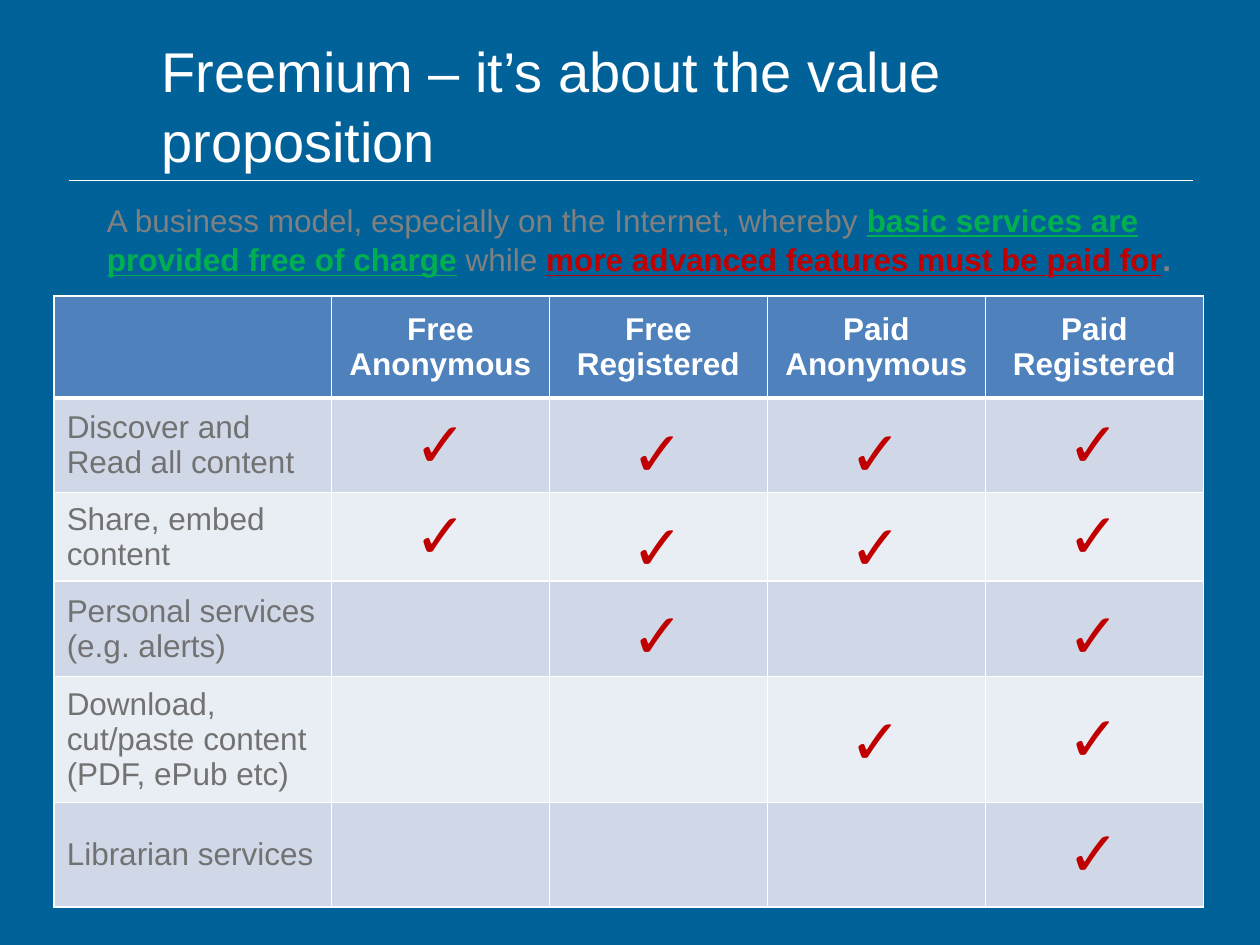
from lxml import etree
from pptx import Presentation
from pptx.dml.color import RGBColor
from pptx.enum.shapes import MSO_CONNECTOR
from pptx.enum.text import MSO_ANCHOR, PP_ALIGN
from pptx.oxml.ns import qn
from pptx.util import Inches, Pt

STRAIGHT = MSO_CONNECTOR.STRAIGHT
MIDDLE = MSO_ANCHOR.MIDDLE
LEFT, CENTER = PP_ALIGN.LEFT, PP_ALIGN.CENTER

WHITE, GREY, RED = "FFFFFF", "808080", "C00000"
CHECK = "✓"
TITLE = {"size": Pt(32), "name": "Arial", "color": WHITE, "bold": False}
BODY = {"size": Pt(18), "name": "Arial", "color": GREY}
KEY_POINT = {**BODY, "bold": True, "underline": True}
HEADER = {**BODY, "color": WHITE, "bold": True}
FEATURE = {**BODY, "color": "727272", "bold": False}
MARK = {"size": Pt(36), "name": "Arial", "color": RED, "bold": False}
SERIF_MARK = {**MARK, "name": "TeX Gyre Schola"}

DEFINITION = [
    ("A business model, especially on the Internet, whereby ", BODY),
    ("basic services are provided free of charge", {**KEY_POINT, "color": "00B050"}),
    (" while ", BODY),
    ("more advanced features must be paid for", {**KEY_POINT, "color": RED}),
    (".", {**BODY, "bold": True}),
]
HEADINGS = ["", "Free Anonymous", "Free Registered", "Paid Anonymous", "Paid\nRegistered"]
# Feature, then the marks of the four plans: A = Arial, S = serif, - = none
FEATURES = [
    ("Discover and Read all content", "ASSA"),
    ("Share, embed content", "ASSA"),
    ("Personal services (e.g. alerts)", "-S-S"),
    ("Download, cut/paste content (PDF, ePub etc)", "--SA"),
    ("Librarian services", "---A"),
]
MARK_STYLES = {"A": MARK, "S": SERIF_MARK}
COLUMN_WIDTHS = [22] + [17.3] * 4
ROW_HEIGHTS = [10.8, 10, 9.33, 10.13, 13.33, 11.07]
HEADER_FILL = "4F81BD"
BAND_FILLS = ["D0D8E8", "E9EDF4"]


def rgb(color):
    return RGBColor.from_string(color)


class SlideBuilder:
    """Draws on one slide; lengths are percentages of its width and height."""

    def __init__(self, deck, background):
        self.deck = deck
        self.slide = deck.slides.add_slide(deck.slide_layouts[5])
        fill = self.slide.background.fill
        fill.solid()
        fill.fore_color.rgb = rgb(background)

    def across(self, share):
        return round(self.deck.slide_width * share / 100)

    def down(self, share):
        return round(self.deck.slide_height * share / 100)

    def frame(self, left, top, width, height):
        return self.across(left), self.down(top), self.across(width), self.down(height)

    def add_spans(self, para, spans, align=LEFT, spacing=1.0):
        """Fill a paragraph with styled runs; a newline is a line break."""
        para.alignment = align
        para.line_spacing = spacing
        for text, style in spans:
            for index, line in enumerate(text.split("\n")):
                if index:
                    para.add_line_break()
                span = para.add_run()
                span.text = line
                for name, value in style.items():
                    if name == "color":
                        span.font.color.rgb = rgb(value)
                    else:
                        setattr(span.font, name, value)

    def title(self, text, *place):
        box = self.slide.shapes.title
        box.left, box.top, box.width, box.height = self.frame(*place)
        box.text_frame.vertical_anchor = MIDDLE
        self.add_spans(box.text_frame.paragraphs[0], [(text, TITLE)], spacing=1.05)

    def text(self, spans, *place):
        box = self.slide.shapes.add_textbox(*self.frame(*place))
        box.text_frame.word_wrap = True
        self.add_spans(box.text_frame.paragraphs[0], spans, spacing=1.05)

    def rule(self, left, top, width):
        x, y, length, _ = self.frame(left, top, width, 0)
        line = self.slide.shapes.add_connector(STRAIGHT, x, y, x + length, y)
        line.line.color.rgb = rgb(WHITE)
        line.line.width = Pt(0.5)
        etree.SubElement(line._element.spPr, qn("a:effectLst"))

    def borders(self, cell, top, bottom):
        properties = cell._tc.get_or_add_tcPr()
        for side, width in {"L": 1, "R": 1, "T": top, "B": bottom}.items():
            edge = etree.SubElement(properties, qn(f"a:ln{side}"), w=str(int(Pt(width))))
            fill = etree.SubElement(edge, qn("a:solidFill"))
            etree.SubElement(fill, qn("a:srgbClr"), val=WHITE)

    def cell(self, cell, text, style, fill, align, top=1, bottom=1):
        cell.vertical_anchor = MIDDLE
        self.borders(cell, top, bottom)
        cell.fill.solid()
        cell.fill.fore_color.rgb = rgb(fill)
        if text:
            self.add_spans(cell.text_frame.paragraphs[0], [(text, style)], align)

    def plan_table(self, left, top):
        place = self.frame(left, top, sum(COLUMN_WIDTHS), sum(ROW_HEIGHTS))
        table = self.slide.shapes.add_table(
            len(ROW_HEIGHTS), len(COLUMN_WIDTHS), *place).table
        for column, width in zip(table.columns, COLUMN_WIDTHS):
            column.width = self.across(width)
        for row, height in zip(table.rows, ROW_HEIGHTS):
            row.height = self.down(height)
        for column, heading in enumerate(HEADINGS):
            self.cell(table.cell(0, column), heading, HEADER, HEADER_FILL, CENTER, bottom=3)
        for row, (feature, marks) in enumerate(FEATURES, 1):
            fill = BAND_FILLS[(row - 1) % 2]
            edge = 3 if row == 1 else 1
            self.cell(table.cell(row, 0), feature, FEATURE, fill, LEFT, top=edge)
            for column, mark in enumerate(marks, 1):
                style = MARK_STYLES.get(mark)
                self.cell(table.cell(row, column), CHECK if style else "",
                          style, fill, CENTER, top=edge)


def main():
    deck = Presentation()
    deck.slide_width, deck.slide_height = Inches(10), Inches(7.5)
    page = SlideBuilder(deck, "006299")
    page.rule(5.5, 19.07, 89.2)
    page.title("Freemium – it’s about the value proposition", 11.8, 3.47, 81.1, 14.93)
    page.text(DEFINITION, 7.5, 20.4, 90.6, 9.47)
    page.plan_table(4.3, 31.33)
    deck.save("out.pptx")


if __name__ == "__main__":
    main()
